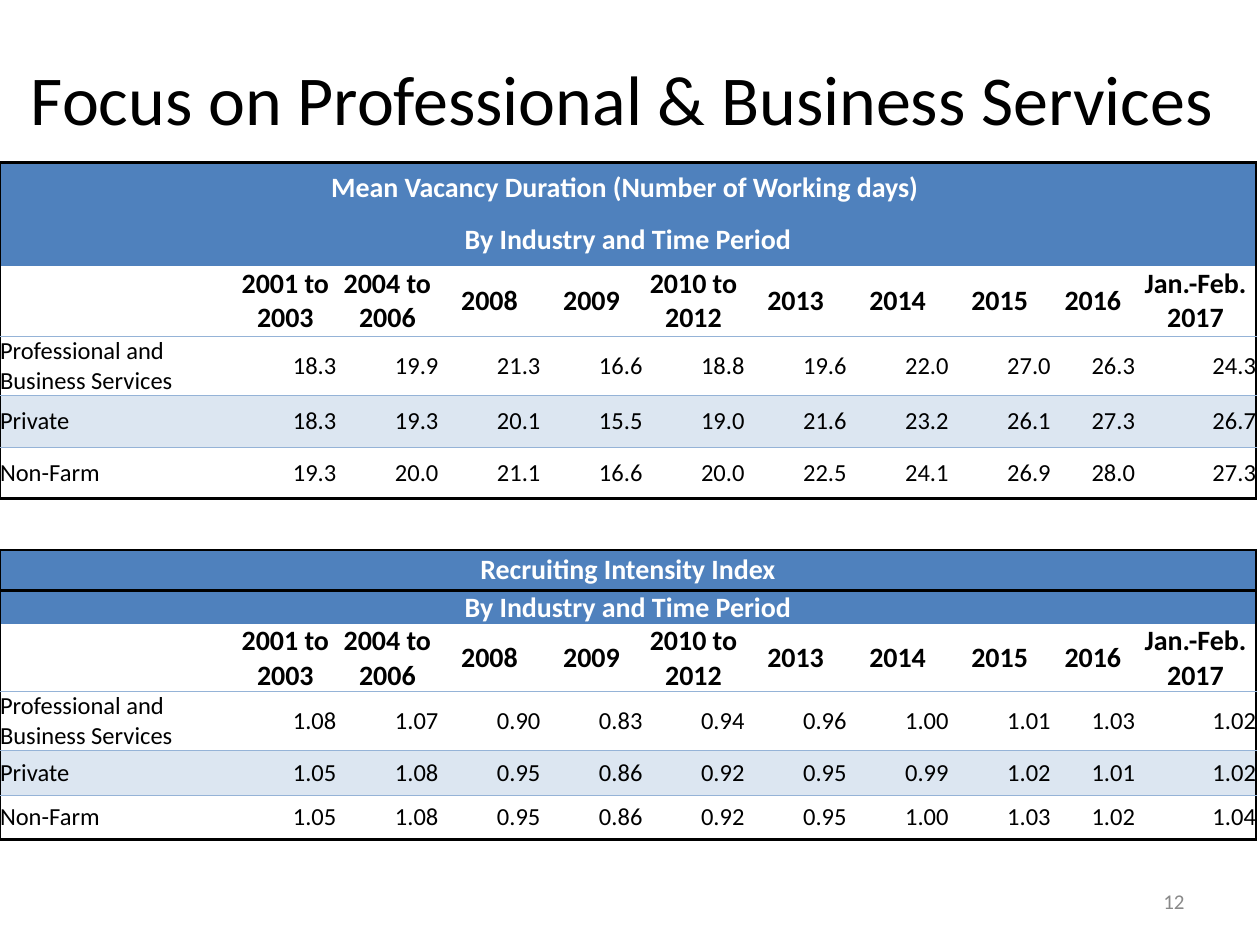
from dataclasses import dataclass

from lxml.etree import SubElement
from pptx import Presentation
from pptx.dml.color import RGBColor as RGB
from pptx.enum.text import MSO_ANCHOR as Anchor, PP_ALIGN as Align
from pptx.oxml.ns import qn
from pptx.util import Inches, Pt


@dataclass(frozen=True)
class Theme:
    """Colours, type sizes and line widths of the slide."""
    font: str = "Calibri"
    ink: str = "000000"
    muted: str = "898989"
    white: str = "FFFFFF"
    banner: str = "4F81BD"
    band: str = "DCE6F1"
    rule: str = "95B3D7"
    title: int = 40
    heading: int = 16
    body: int = 14
    number: int = 12
    thin: float = 0.5
    thick: float = 1.5


THEME = Theme()
FRAME = (THEME.ink, THEME.thick)
RULE = (THEME.rule, THEME.thin)
NO_GRID_STYLE = "{2D5ABB26-0587-4C30-8999-92F81FD0307C}"

COLUMNS = [1.86] + [0.81] * 8 + [0.67, 0.96]
ROWS = [0.41, 0.41, 0.56, 0.41, 0.41, 0.41, 0.41, 0.32, 0.24, 0.48, 0.41, 0.36, 0.35]
SPACER_ROW = 6
PERIODS = ["", "2001 to 2003", "2004 to 2006", "2008", "2009", "2010 to 2012",
           "2013", "2014", "2015", "2016", "Jan.-Feb. 2017"]
INDUSTRIES = ["Professional and Business Services", "Private", "Non-Farm"]
SUBTITLE = "By Industry and Time Period"
DURATION = [
    [18.3, 19.9, 21.3, 16.6, 18.8, 19.6, 22.0, 27.0, 26.3, 24.3],
    [18.3, 19.3, 20.1, 15.5, 19.0, 21.6, 23.2, 26.1, 27.3, 26.7],
    [19.3, 20.0, 21.1, 16.6, 20.0, 22.5, 24.1, 26.9, 28.0, 27.3],
]
INTENSITY = [
    [1.08, 1.07, 0.90, 0.83, 0.94, 0.96, 1.00, 1.01, 1.03, 1.02],
    [1.05, 1.08, 0.95, 0.86, 0.92, 0.95, 0.99, 1.02, 1.01, 1.02],
    [1.05, 1.08, 0.95, 0.86, 0.92, 0.95, 1.00, 1.03, 1.02, 1.04],
]


def write(tf, text, size, color, align, bold=False):
    """Put one formatted paragraph into a text frame."""
    tf.text = text
    p = tf.paragraphs[0]
    p.alignment = align
    for r in p.runs:
        r.font.name, r.font.size, r.font.bold = THEME.font, Pt(size), bold
        r.font.color.rgb = RGB.from_string(color)


def add_text(s, box, text, size, color, align):
    """Add a wrapped, vertically centred text box."""
    tf = s.shapes.add_textbox(*map(Inches, box)).text_frame
    tf.word_wrap = True
    tf.vertical_anchor = Anchor.MIDDLE
    write(tf, text, size, color, align)


def set_borders(cell, **sides):
    """Draw the given sides (L, R, T, B) of a cell as (colour, width)."""
    tc_pr = cell._tc.get_or_add_tcPr()
    drawn = [(side, sides[side]) for side in "LRTB" if sides.get(side)]
    for index, (side, (color, width)) in enumerate(drawn):
        ln = SubElement(tc_pr, qn(f"a:ln{side}"), w=str(Pt(width)))
        fill = SubElement(ln, qn("a:solidFill"))
        SubElement(fill, qn("a:srgbClr"), val=color)
        tc_pr.insert(index, ln)


def set_fill(cell, color):
    """Fill a cell, or leave it clear when there is no colour."""
    if color:
        cell.fill.solid()
        cell.fill.fore_color.rgb = RGB.from_string(color)
    else:
        cell.fill.background()


def fill_cell(cell, text, size, color, align, bold=False, fill=None):
    """Set a cell's text, margins and fill."""
    set_fill(cell, fill)
    if text:
        cell.margin_left = cell.margin_right = cell.margin_top = cell.margin_bottom = 0
        cell.vertical_anchor = Anchor.MIDDLE
        write(cell.text_frame, text, size, color, align, bold)


def add_banner(table, row, text, top):
    """Merge a row into a coloured heading."""
    last = len(COLUMNS) - 1
    cell = table.cell(row, 0)
    cell.merge(table.cell(row, last))
    fill_cell(cell, text, THEME.heading, THEME.white, Align.CENTER, True, THEME.banner)
    for col in range(last + 1):
        set_borders(table.cell(row, col), L=None if col else FRAME,
                    R=FRAME if col in (0, last) else None, T=top)


def add_row(table, row, texts, top, bottom, header=False, fill=None):
    """Write one row of period headings or of figures."""
    last = len(texts) - 1
    size = THEME.heading if header else THEME.body
    for col, text in enumerate(texts):
        align = Align.CENTER if header else Align.RIGHT if col else Align.LEFT
        cell = table.cell(row, col)
        fill_cell(cell, text, size, THEME.ink, align, header, fill)
        set_borders(cell, L=None if col else FRAME, R=FRAME if col == last else None,
                    T=top, B=bottom)


def add_section(table, first, heading, figures, decimals):
    """Write headings, periods and industry rows from a given row on."""
    add_banner(table, first, heading, FRAME)
    add_banner(table, first + 1, SUBTITLE, None)
    add_row(table, first + 2, PERIODS, None, RULE, header=True)
    for i, (industry, values) in enumerate(zip(INDUSTRIES, figures)):
        texts = [industry] + [f"{value:.{decimals}f}" for value in values]
        bottom = FRAME if i == len(figures) - 1 else RULE
        add_row(table, first + 3 + i, texts, RULE, bottom, fill=THEME.band if i % 2 else None)


def add_grid(s):
    """Add the plain table with its column widths and row heights."""
    frame = s.shapes.add_table(len(ROWS), len(COLUMNS), Inches(0), Inches(1.29),
                               Inches(10), Inches(sum(ROWS)))
    table = frame.table
    table.first_row = table.horz_banding = False
    table._tbl.tblPr.find(qn("a:tableStyleId")).text = NO_GRID_STYLE
    for column, width in zip(table.columns, COLUMNS):
        column.width = Inches(width)
    for row, height in zip(table.rows, ROWS):
        row.height = Inches(height)
    return table


def main():
    """Build and save the slide."""
    prs = Presentation()
    prs.slide_width, prs.slide_height = Inches(10), Inches(7.5)
    s = prs.slides.add_slide(prs.slide_layouts[6])
    add_text(s, (0, 0.4, 10, 0.75), "Focus on Professional & Business Services ",
             THEME.title, THEME.ink, Align.CENTER)
    add_text(s, (7.17, 6.95, 2.33, 0.4), "12", THEME.number, THEME.muted, Align.RIGHT)
    table = add_grid(s)
    add_section(table, 0, "Mean Vacancy Duration (Number of Working days) ", DURATION, 1)
    for cell in table.rows[SPACER_ROW].cells:
        set_fill(cell, None)
        set_borders(cell, T=FRAME, B=FRAME)
    add_section(table, SPACER_ROW + 1, "Recruiting Intensity Index", INTENSITY, 2)
    prs.save("out.pptx")


if __name__ == "__main__":
    main()
